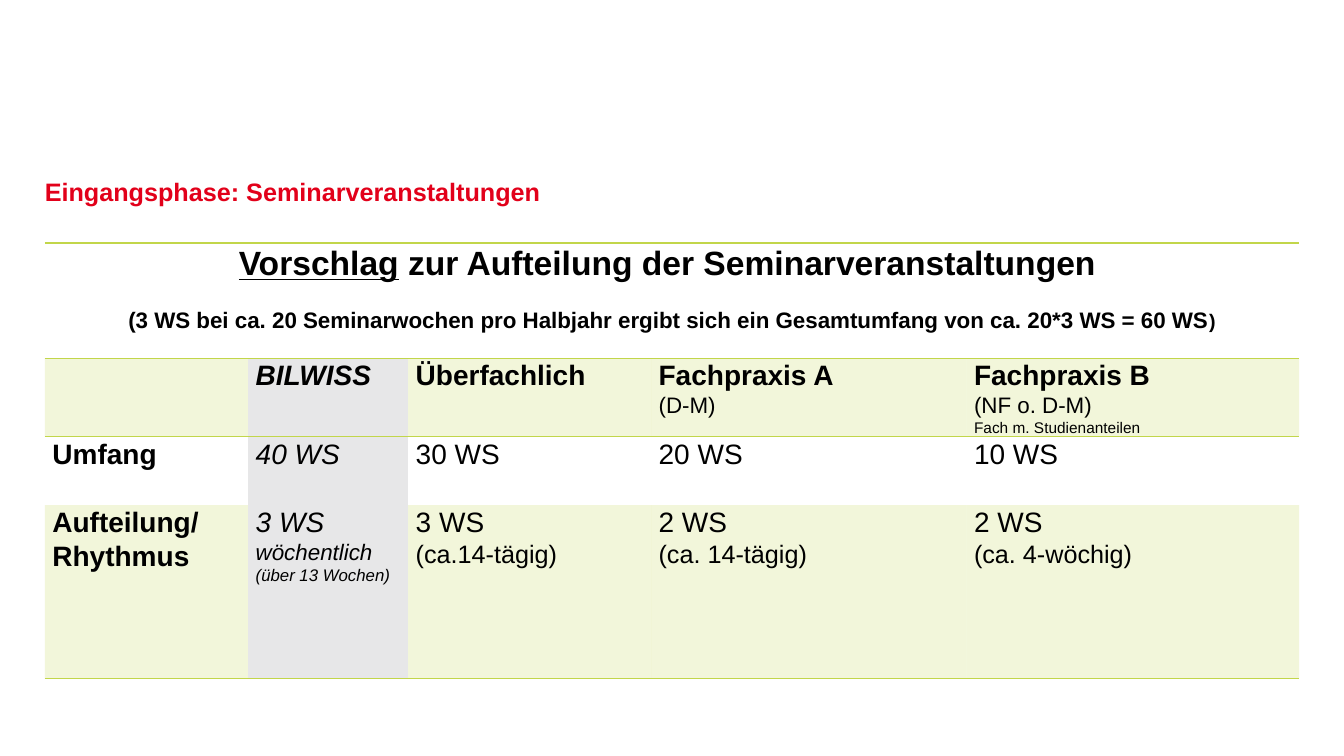
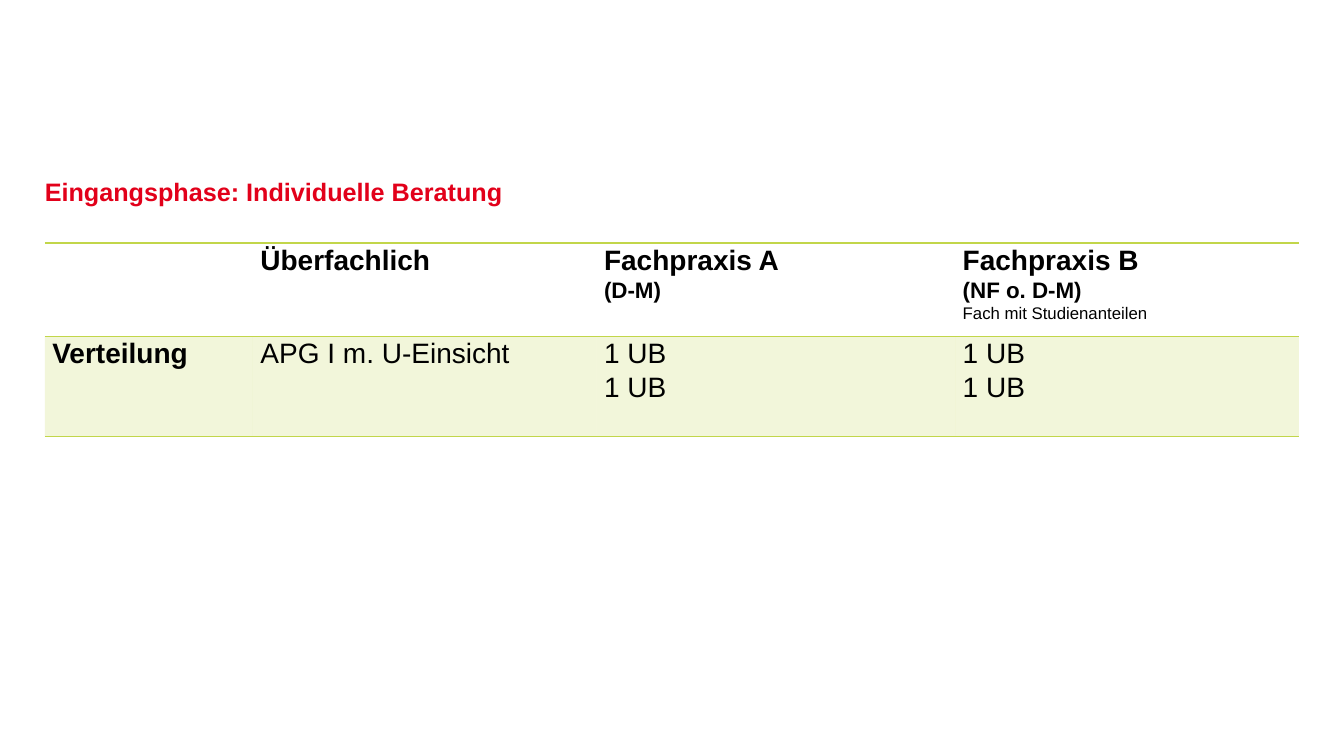
from lxml.etree import SubElement
from pptx import Presentation
from pptx.dml.color import RGBColor
from pptx.enum.text import MSO_ANCHOR, MSO_AUTO_SIZE, PP_ALIGN
from pptx.oxml.ns import qn
from pptx.util import Pt

RED = RGBColor(0xE2, 0x00, 0x1A)
GREEN = RGBColor(0xC2, 0xD6, 0x4A)
GREY = RGBColor(0xE7, 0xE7, 0xE8)
BLACK = RGBColor(0, 0, 0)
FONT = "Arial"
LEFT, WIDTH = 32, 896
NO_STYLE = "{2D5ABB26-0587-4C30-8999-92F81FD0307C}"


def add_run(p, text, size, style="", color=BLACK):
    r = p.add_run()
    r.text = text
    f = r.font
    f.name, f.size, f.color.rgb = FONT, Pt(size), color
    f.bold, f.italic, f.underline = ("b" in style, "i" in style, "u" in style)


def add_title_slide(prs, title):
    s = prs.slides.add_slide(prs.slide_layouts[5])
    sp = s.shapes.title
    sp.left, sp.top, sp.width, sp.height = Pt(LEFT), Pt(111.5), Pt(WIDTH), Pt(51)
    tf = sp.text_frame
    tf.auto_size = MSO_AUTO_SIZE.NONE
    tf.word_wrap = True
    tf.vertical_anchor = MSO_ANCHOR.MIDDLE
    tf.margin_left = tf.margin_right = tf.margin_top = tf.margin_bottom = 0
    p = tf.paragraphs[0]
    p.alignment = PP_ALIGN.LEFT
    add_run(p, title, 18, "b", RED)
    return s


def fill_text(cell, paragraphs, align=PP_ALIGN.LEFT, gap=0):
    cell.margin_left = cell.margin_right = Pt(5.4)
    cell.margin_top = cell.margin_bottom = 0
    tf = cell.text_frame
    for i, runs in enumerate(paragraphs):
        p = tf.add_paragraph() if i else tf.paragraphs[0]
        p.alignment = align
        p.line_spacing = 1.07
        if i and gap:
            p.space_before = Pt(gap)
        for run in runs:
            add_run(p, *run)


def draw_border(cell, edge):
    ln = SubElement(cell._tc.get_or_add_tcPr(), qn("a:" + edge), w=str(Pt(1)))
    fill = SubElement(ln, qn("a:solidFill"))
    SubElement(fill, qn("a:srgbClr"), val=str(GREEN))


def fill_cell(cell, color, alpha=None):
    if color is None:
        cell.fill.background()
        return
    cell.fill.solid()
    cell.fill.fore_color.rgb = color
    if alpha:
        clr = next(cell._tc.tcPr.find(qn("a:solidFill")).iterchildren())
        SubElement(clr, qn("a:alpha"), val=str(alpha * 1000))


def add_grid(s, widths, heights, lines, green_rows, grey_col=None):
    frame = s.shapes.add_table(len(heights), len(widths), Pt(LEFT), Pt(173.5),
                               Pt(WIDTH), Pt(sum(heights)))
    table = frame.table
    table.first_row = table.horz_banding = False
    table._tbl.tblPr.find(qn("a:tableStyleId")).text = NO_STYLE
    for column, width in zip(table.columns, widths):
        column.width = Pt(width)
    for r, height in enumerate(heights):
        table.rows[r].height = Pt(height)
        for c in range(len(widths)):
            cell = table.cell(r, c)
            for edge, line in (("lnT", r), ("lnB", r + 1)):
                if line in lines:
                    draw_border(cell, edge)
            if c == grey_col and r > 0:
                fill_cell(cell, GREY)
            elif r in green_rows:
                fill_cell(cell, GREEN, 20)
            else:
                fill_cell(cell, None)
    return table


def fill_rows(table, rows, first=0):
    for r, row in enumerate(rows, first):
        for c, paragraphs in enumerate(row):
            fill_text(table.cell(r, c), paragraphs)


def build_seminars(prs):
    s = add_title_slide(prs, "Eingangsphase: Seminarveranstaltungen")
    table = add_grid(s, [145.3, 114.3, 173.5, 225.3, 237.6], [82.4, 56, 49, 124],
                     lines={0, 1, 4}, green_rows={1, 3}, grey_col=1)
    table.cell(0, 0).merge(table.cell(0, 4))
    fill_text(table.cell(0, 0), [
        [("Vorschlag", 24, "bu"),
         (" zur Aufteilung der Seminarveranstaltungen ", 24, "b")],
        [("(3 WS bei ca. 20 Seminarwochen pro Halbjahr ergibt sich ein "
          "Gesamtumfang von ca. 20*3 WS = 60 WS", 16, "b"), (")", 14, "b")],
    ], PP_ALIGN.CENTER, gap=17.2)
    fill_rows(table, [
        [[],
         [[("BILWISS", 20, "bi")]],
         [[("Überfachlich", 20, "b")]],
         [[("Fachpraxis A", 20, "b")], [("(D-M)", 16)]],
         [[("Fachpraxis B", 20, "b")], [("(NF o. D-M)", 16)],
          [("Fach m. Studienanteilen", 11)]]],
        [[[("Umfang", 20, "b")]],
         [[("40 WS", 20, "i")]],
         [[("30 WS", 20)]],
         [[("20 WS", 20)]],
         [[("10 WS", 20)]]],
        [[[("Aufteilung/", 20, "b")], [("Rhythmus", 20, "b")]],
         [[("3 WS", 20, "i")],
          [("wöchentlich ", 16, "i"), ("(über 13 Wochen)", 12, "i")]],
         [[("3 WS", 20)], [("(ca.14-tägig)", 18)]],
         [[("2 WS", 20)], [("(ca. 14-tägig)", 18)]],
         [[("2 WS", 20)], [("(ca. 4-wöchig)", 18)]]],
    ], first=1)


def build_advice(prs):
    s = add_title_slide(prs, "Eingangsphase: Individuelle Beratung")
    table = add_grid(s, [148.6, 245.5, 256.2, 245.5], [66.8, 71.4],
                     lines={0, 1, 2}, green_rows={1})
    lessons = [[("1 UB", 20)], [("1 UB", 20)]]
    fill_rows(table, [
        [[],
         [[("Überfachlich", 20, "b")]],
         [[("Fachpraxis A", 20, "b")], [("(D-M)", 16, "b")]],
         [[("Fachpraxis B", 20, "b")], [("(NF o. D-M)", 16, "b")],
          [("Fach mit Studienanteilen", 12)]]],
        [[[("Verteilung", 20, "b")]],
         [[("APG I m. U-Einsicht", 20)]],
         lessons,
         lessons],
    ])


def main():
    prs = Presentation()
    prs.slide_width, prs.slide_height = Pt(960), Pt(540)
    build_seminars(prs)
    build_advice(prs)
    prs.save("out.pptx")


if __name__ == "__main__":
    main()
